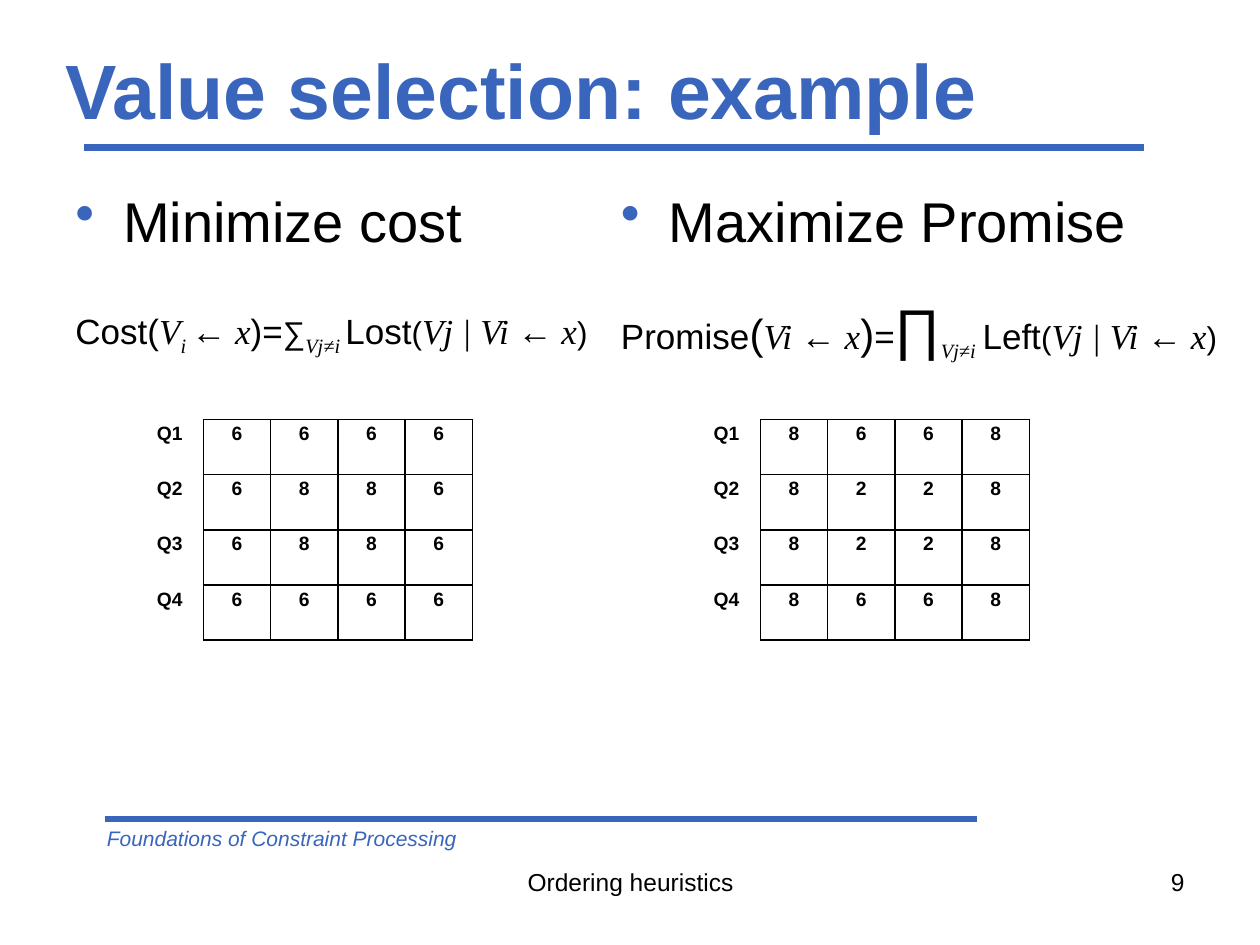
from dataclasses import dataclass

from lxml import etree
from pptx import Presentation, util as u
from pptx.dml.color import RGBColor
from pptx.enum import shapes, text
from pptx.oxml.ns import qn


@dataclass(frozen=True)
class Theme:
    blue: str = "3A65BC"
    black: str = "000000"
    white: str = "FFFFFF"
    sans: str = "Arial"
    serif: str = "Times New Roman"
    title: int = 44
    heading: int = 32
    large: int = 24
    formula: int = 20
    small: int = 18
    footer: int = 14
    course: int = 12
    cell: int = 11


theme = Theme()


def write(paragraph, words, size, color=theme.black, font=theme.sans,
          bold=False, italic=False, baseline=0):
    run = paragraph.add_run()
    run.text = words
    run.font.size = u.Pt(size)
    run.font.name = font
    run.font.bold = bold
    run.font.italic = italic
    run.font.color.rgb = RGBColor.from_string(color)
    if baseline:
        run.font._element.set("baseline", str(baseline * 1000))


def add_frame(left, top, width, height, align=text.PP_ALIGN.LEFT):
    box = slide.shapes.add_textbox(*map(u.Inches, (left, top, width, height)))
    frame = box.text_frame
    frame.word_wrap = True
    frame.paragraphs[0].alignment = align
    return frame


deck = Presentation()
deck.slide_width, deck.slide_height = u.Inches(10), u.Inches(7.5)
slide = deck.slides.add_slide(deck.slide_layouts[6])

for start, end, y in ((0.67, 9.08, 1.17), (0.83, 7.75, 6.5)):
    rule = slide.shapes.add_connector(
        shapes.MSO_CONNECTOR.STRAIGHT,
        u.Inches(start), u.Inches(y), u.Inches(end), u.Inches(y))
    rule.line.color.rgb = RGBColor.from_string(theme.blue)
    rule.line.width = u.Pt(4)
    etree.SubElement(rule._element.spPr, qn("a:effectLst"))

course = add_frame(0.75, 6.5, 5.25, 0.3)
write(course.paragraphs[0], "Foundations of Constraint Processing",
      theme.course, color=theme.blue, italic=True)

title = add_frame(0.42, 0.33, 9, 0.75)
title.vertical_anchor = text.MSO_ANCHOR.MIDDLE
write(title.paragraphs[0], "Value selection: example", theme.title,
      color=theme.blue, bold=True)

topic = add_frame(3.42, 6.83, 3.17, 0.52, text.PP_ALIGN.CENTER)
write(topic.paragraphs[0], "Ordering heuristics", theme.footer)
page = add_frame(7.17, 6.83, 2.33, 0.52, text.PP_ALIGN.RIGHT)
write(page.paragraphs[0], "9", theme.footer)

variable = dict(size=theme.formula, font=theme.serif, italic=True)
subscript = dict(variable, baseline=-25)
plain = dict(size=theme.formula)
small = dict(size=theme.small)
large = dict(size=theme.large)

cost_formula = (
    ("Cost(", plain), ("V", variable), ("i ", subscript), ("← x", variable),
    (")=", plain), ("∑", small), ("Vj≠i ", subscript), ("Lost", plain),
    ("(", small), ("Vj | Vi ← x", variable), (")", small))
promise_formula = (
    ("Promise", plain), ("(", large), ("Vi ← x", variable), (")", large),
    ("=", plain), ("∏", dict(size=theme.heading)), ("Vj≠i", subscript),
    (" ", dict(large, baseline=-25)), ("Left", plain), ("(", small),
    ("Vj | Vi ← x", variable), (")", small))

methods = (
    ("Minimize cost", cost_formula, 0.5, 4.5, 32, 1.08, ("6666", "6886", "6886", "6666")),
    ("Maximize Promise", promise_formula, 4.83, 5.17, 23, 5.5, ("8668", "8228", "8228", "8668")),
)

for heading, formula, left, width, gap, board_left, scores in methods:
    body = add_frame(left, 1.43, width, 4.9)
    bullet = body.paragraphs[0]
    props = bullet._p.get_or_add_pPr()
    props.set("marL", str(u.Inches(0.38)))
    props.set("indent", str(u.Inches(-0.38)))
    bullet_color = etree.SubElement(props, qn("a:buClr"))
    etree.SubElement(bullet_color, qn("a:srgbClr"), val=theme.blue)
    etree.SubElement(props, qn("a:buChar"), char="•")
    write(bullet, heading, theme.heading)

    equation = body.add_paragraph()
    equation.space_before = u.Pt(gap)
    for words, style in formula:
        write(equation, words, **style)

    board = slide.shapes.add_table(
        4, 5, u.Inches(board_left), u.Inches(3.33), u.Inches(2.67), u.Inches(1.75)).table
    board.first_row = board.horz_banding = False
    for row, values in enumerate(scores):
        for column, value in enumerate((f"Q{row + 1}", *values)):
            square = board.cell(row, column)
            square.margin_left = square.margin_right = u.Inches(0.1)
            square.margin_top = square.margin_bottom = u.Inches(0.03)
            label = square.text_frame.paragraphs[0]
            label.alignment = text.PP_ALIGN.CENTER
            write(label, value, theme.cell, bold=True)
            cell_props = square._tc.get_or_add_tcPr()
            for side in "LRTB":
                edge = etree.SubElement(cell_props, qn(f"a:ln{side}"), w=str(u.Pt(1)))
                ink = theme.white if column == 0 and side != "R" else theme.black
                edge_fill = etree.SubElement(edge, qn("a:solidFill"))
                etree.SubElement(edge_fill, qn("a:srgbClr"), val=ink)
            square.fill.background()

deck.save("out.pptx")
